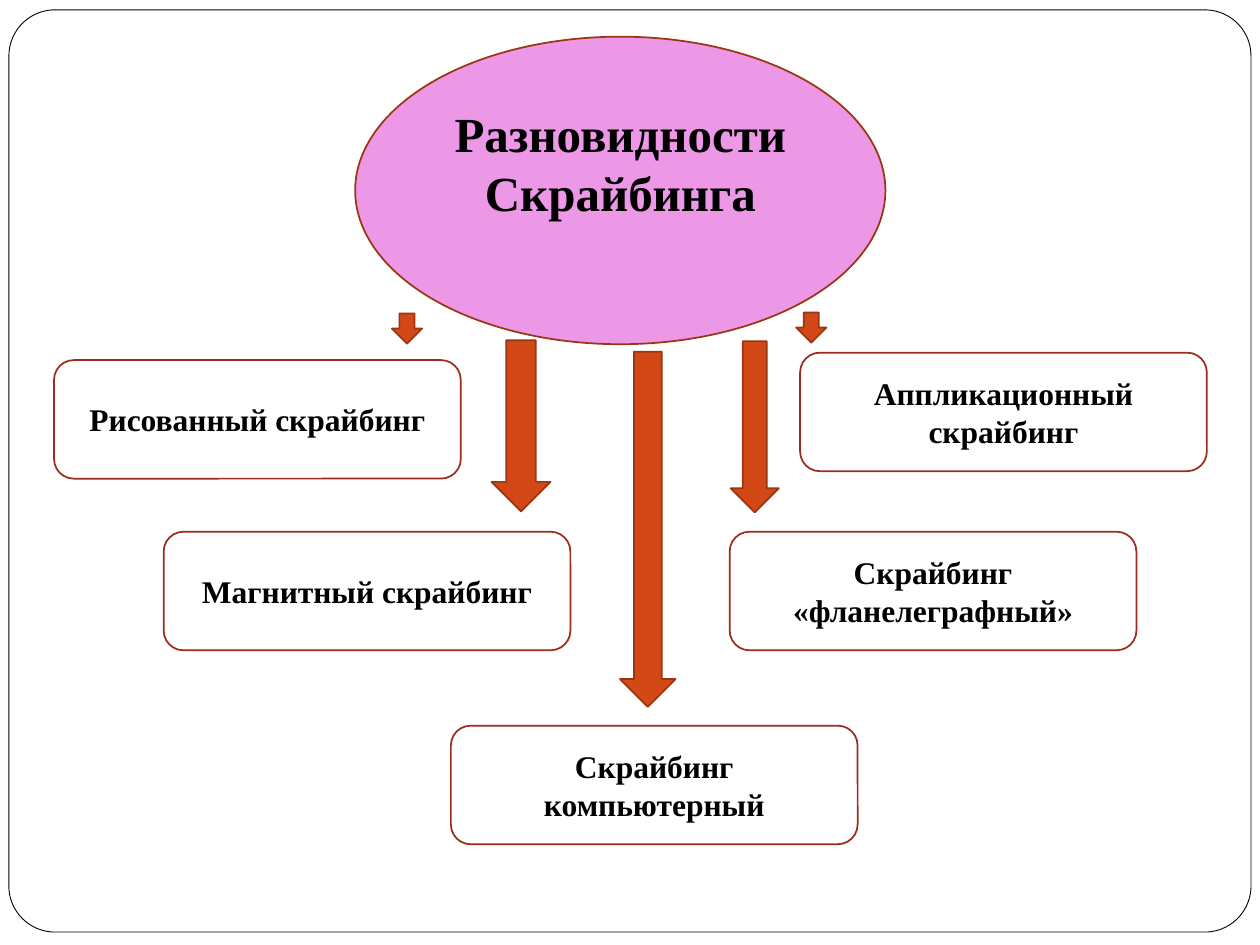
from dataclasses import dataclass

from pptx import Presentation
from pptx.dml.color import RGBColor
from pptx.enum.shapes import MSO_SHAPE
from pptx.enum.text import MSO_ANCHOR, MSO_AUTO_SIZE, PP_ALIGN
from pptx.shapes.autoshape import Shape
from pptx.slide import Slide
from pptx.text.text import TextFrame
from pptx.util import Cm, Pt

ROUNDED = MSO_SHAPE.ROUNDED_RECTANGLE
OVAL = MSO_SHAPE.OVAL
DOWN_ARROW = MSO_SHAPE.DOWN_ARROW
MIDDLE = MSO_ANCHOR.MIDDLE
CENTER = PP_ALIGN.CENTER
NO_AUTOFIT = MSO_AUTO_SIZE.NONE

FONT = "Times New Roman"
BLACK = "000000"
WHITE = "FFFFFF"
PINK = "ED97E7"
ORANGE = "D34817"
DARK_ORANGE = "9C3511"
DARK_RED = "9B2D1F"
CARD_WIDTH, CARD_HEIGHT = 8.2, 2.39
TITLE_LINES = ("Разновидности", "Скрайбинга")


@dataclass(frozen=True)
class Box:
    left: float
    top: float
    width: float
    height: float


@dataclass(frozen=True)
class Card:
    left: float
    top: float
    lines: tuple[str, ...]


FRAME = Box(0.18, 0.2, 25.04, 18.59)
ELLIPSE = Box(7.16, 0.74, 10.69, 6.2)
TITLE = Box(8.73, 0.74, 7.55, 5.08)

CARDS = (
    Card(1.09, 7.26, ("Рисованный скрайбинг",)),
    Card(3.3, 10.72, ("Магнитный скрайбинг",)),
    Card(9.09, 14.63, ("Скрайбинг компьютерный",)),
    Card(14.71, 10.72, ("Скрайбинг", "«фланелеграфный»")),
    Card(16.13, 7.11, ("Аппликационный скрайбинг",)),
)

ARROWS = (
    Box(7.9, 6.32, 0.61, 0.61),
    Box(9.91, 6.86, 1.19, 3.45),
    Box(12.5, 7.09, 1.12, 7.16),
    Box(14.73, 6.88, 0.97, 3.45),
    Box(16.05, 6.3, 0.61, 0.61),
)


def color(value: str) -> RGBColor:
    return RGBColor.from_string(value)


def add_box(slide: Slide, kind: MSO_SHAPE, box: Box, fill: str, line: str,
            line_width: float = 1) -> Shape:
    shape = slide.shapes.add_shape(
        kind, Cm(box.left), Cm(box.top), Cm(box.width), Cm(box.height))
    shape.shadow.inherit = False
    shape.fill.solid()
    shape.fill.fore_color.rgb = color(fill)
    shape.line.color.rgb = color(line)
    shape.line.width = Pt(line_width)
    return shape


def write_lines(frame: TextFrame, lines: tuple[str, ...], size: int) -> None:
    frame.word_wrap = True
    frame.auto_size = NO_AUTOFIT
    frame.vertical_anchor = MIDDLE
    for index, line in enumerate(lines):
        paragraph = frame.add_paragraph() if index else frame.paragraphs[0]
        paragraph.alignment = CENTER
        run = paragraph.add_run()
        run.text = line
        run.font.name = FONT
        run.font.size = Pt(size)
        run.font.bold = True
        run.font.color.rgb = color(BLACK)


def add_title(slide: Slide) -> None:
    add_box(slide, OVAL, ELLIPSE, PINK, DARK_ORANGE)
    title = slide.shapes.title
    title.left, title.top = Cm(TITLE.left), Cm(TITLE.top)
    title.width, title.height = Cm(TITLE.width), Cm(TITLE.height)
    write_lines(title.text_frame, TITLE_LINES, 28)
    slide.shapes._spTree.append(title._element)


def add_card(slide: Slide, card: Card) -> None:
    box = Box(card.left, card.top, CARD_WIDTH, CARD_HEIGHT)
    shape = add_box(slide, ROUNDED, box, WHITE, DARK_RED)
    write_lines(shape.text_frame, card.lines, 18)


def main() -> None:
    presentation = Presentation()
    presentation.slide_width = Cm(25.4)
    presentation.slide_height = Cm(19.05)
    slide = presentation.slides.add_slide(
        presentation.slide_layouts.get_by_name("Title Only"))

    frame = add_box(slide, ROUNDED, FRAME, WHITE, BLACK, 0.5)
    frame.adjustments[0] = 0.05
    add_title(slide)
    for card in CARDS:
        add_card(slide, card)
    for arrow in ARROWS:
        add_box(slide, DOWN_ARROW, arrow, ORANGE, DARK_ORANGE)

    presentation.save("out.pptx")


if __name__ == "__main__":
    main()
